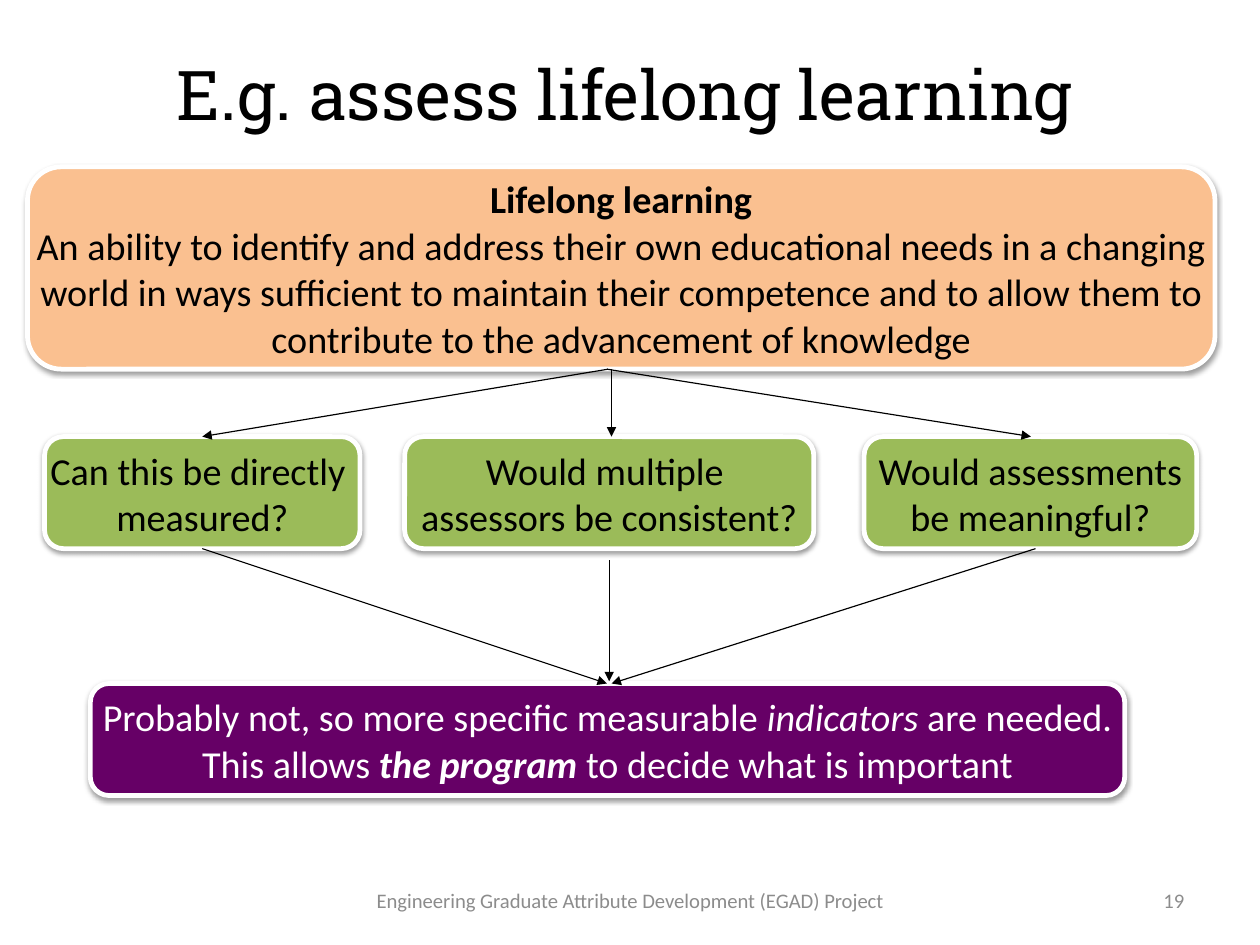
from lxml import etree
from pptx import Presentation
from pptx.dml.color import RGBColor
from pptx.enum.shapes import MSO_CONNECTOR, MSO_SHAPE
from pptx.enum.text import MSO_ANCHOR, PP_ALIGN
from pptx.oxml import parse_xml
from pptx.oxml.ns import nsdecls, qn
from pptx.util import Inches, Pt

ROUNDED = MSO_SHAPE.ROUNDED_RECTANGLE
STRAIGHT = MSO_CONNECTOR.STRAIGHT
MIDDLE = MSO_ANCHOR.MIDDLE
CENTER, RIGHT = PP_ALIGN.CENTER, PP_ALIGN.RIGHT

BLACK, WHITE, GRAY = "000000", "FFFFFF", "8C8C8C"
ORANGE, GREEN, PURPLE = "FAC090", "9BBB59", "660066"

# The page is 28 by 21 centimetres
CM_PER_INCH = 2.54
SLIDE_WIDTH, SLIDE_HEIGHT = 28 / CM_PER_INCH, 21 / CM_PER_INCH

SHADOW = (
    f'<a:effectLst {nsdecls("a")}>'
    f'<a:outerShdw blurRad="{Pt(3.1)}" dist="{Pt(1.6)}" dir="5400000" rotWithShape="0">'
    '<a:srgbClr val="000000"><a:alpha val="38000"/></a:srgbClr>'
    "</a:outerShdw></a:effectLst>"
)

# Vertical positions of the diagram rows
GOAL_TOP, GOAL_HEIGHT = 1.46, 1.77
QUESTION_TOP, ANSWER_TOP, ROW_HEIGHT = 3.82, 5.98, 0.98
GOAL_BOTTOM = GOAL_TOP + GOAL_HEIGHT
QUESTION_BOTTOM = QUESTION_TOP + ROW_HEIGHT

GOAL = [
    [("Lifelong learning", "b")],
    [("An ability to identify and address their own educational needs in a changing", "")],
    [("world in ways sufficient to maintain their competence and to allow them to", "")],
    [("contribute to the advancement of knowledge", "")],
]
# Left, width, lines
QUESTIONS = [
    (0.39, 2.76, ["Can this be directly ", "measured?"]),
    (3.54, 3.58, ["Would multiple ", "assessors be consistent?"]),
    (7.56, 2.91, ["Would assessments", "be meaningful?"]),
]
ANSWER = [
    [("Probably not, so more specific measurable ", ""), ("indicators", "i"),
     (" are needed.", "")],
    [("This allows ", ""), ("the program", "bi"), (" to decide what is important", "")],
]
# Start and end points
ARROWS = [
    ((5.32, GOAL_BOTTOM), (1.77, QUESTION_TOP)),
    ((5.31, GOAL_BOTTOM), (9.02, QUESTION_TOP)),
    ((5.35, GOAL_BOTTOM), (5.35, QUESTION_TOP)),
    ((1.77, QUESTION_BOTTOM), (5.31, ANSWER_TOP)),
    ((5.33, 4.9), (5.33, 5.96)),
    ((9.06, QUESTION_BOTTOM), (5.35, ANSWER_TOP)),
]


def color(value):
    return RGBColor.from_string(value)


def style_paragraph(paragraph, size, font_color, alignment, font_name="Calibri"):
    paragraph.alignment = alignment
    paragraph.font.name = font_name
    paragraph.font.size = Pt(size)
    paragraph.font.color.rgb = color(font_color)


def set_frame(frame, side, edge, wrap):
    frame.word_wrap = wrap
    frame.vertical_anchor = MIDDLE
    frame.margin_left = frame.margin_right = Inches(side)
    frame.margin_top = frame.margin_bottom = Inches(edge)


def add_label(slide, place, text, size, font_color, alignment, font_name="Calibri"):
    frame = slide.shapes.add_textbox(*map(Inches, place)).text_frame
    set_frame(frame, 0.11, 0.06, True)
    paragraph = frame.paragraphs[0]
    paragraph.text = text
    style_paragraph(paragraph, size, font_color, alignment, font_name)


def add_box(slide, place, fill, lines, font_color=BLACK):
    """Each line is a list of (text, style) runs; style holds b and/or i."""
    shape = slide.shapes.add_shape(ROUNDED, *map(Inches, place))
    shape.fill.solid()
    shape.fill.fore_color.rgb = color(fill)
    shape.line.color.rgb = color(WHITE)
    shape.line.width = Pt(3)
    shape._element.spPr.append(parse_xml(SHADOW))
    frame = shape.text_frame
    set_frame(frame, 0.1, 0.05, False)
    for index, runs in enumerate(lines):
        paragraph = frame.add_paragraph() if index else frame.paragraphs[0]
        style_paragraph(paragraph, 24, font_color, CENTER)
        paragraph.line_spacing = 1.02
        for text, style in runs:
            run = paragraph.add_run()
            run.text = text
            if "b" in style:
                run.font.bold = True
            if "i" in style:
                run.font.italic = True


def add_arrow(slide, start, end):
    connector = slide.shapes.add_connector(STRAIGHT, *map(Inches, start + end))
    connector.line.color.rgb = color(BLACK)
    connector.line.width = Pt(0.75)
    etree.SubElement(connector.line._get_or_add_ln(), qn("a:tailEnd"), type="triangle")
    etree.SubElement(connector._element.spPr, qn("a:effectLst"))


def main():
    presentation = Presentation()
    presentation.slide_width = Inches(SLIDE_WIDTH)
    presentation.slide_height = Inches(SLIDE_HEIGHT)
    slide = presentation.slides.add_slide(presentation.slide_layouts[6])

    # Title and footer
    add_label(slide, (0.51, 0.49, 9.92, 0.65), "E.g. assess lifelong learning",
              43.2, BLACK, CENTER, "Roboto Slab")
    add_label(slide, (3.07, 7.66, 4.88, 0.44),
              "Engineering Graduate Attribute Development (EGAD) Project", 13, GRAY, CENTER)
    add_label(slide, (7.9, 7.66, 2.57, 0.44), "19", 13, GRAY, RIGHT)

    # Goal, questions and answer
    add_box(slide, (0.24, GOAL_TOP, 10.39, GOAL_HEIGHT), ORANGE, GOAL)
    for left, width, lines in QUESTIONS:
        add_box(slide, (left, QUESTION_TOP, width, ROW_HEIGHT), GREEN,
                [[(line, "")] for line in lines])
    add_box(slide, (0.79, ANSWER_TOP, 9.05, ROW_HEIGHT), PURPLE, ANSWER, WHITE)

    # Arrows between the rows
    for start, end in ARROWS:
        add_arrow(slide, start, end)

    presentation.save("out.pptx")


if __name__ == "__main__":
    main()
